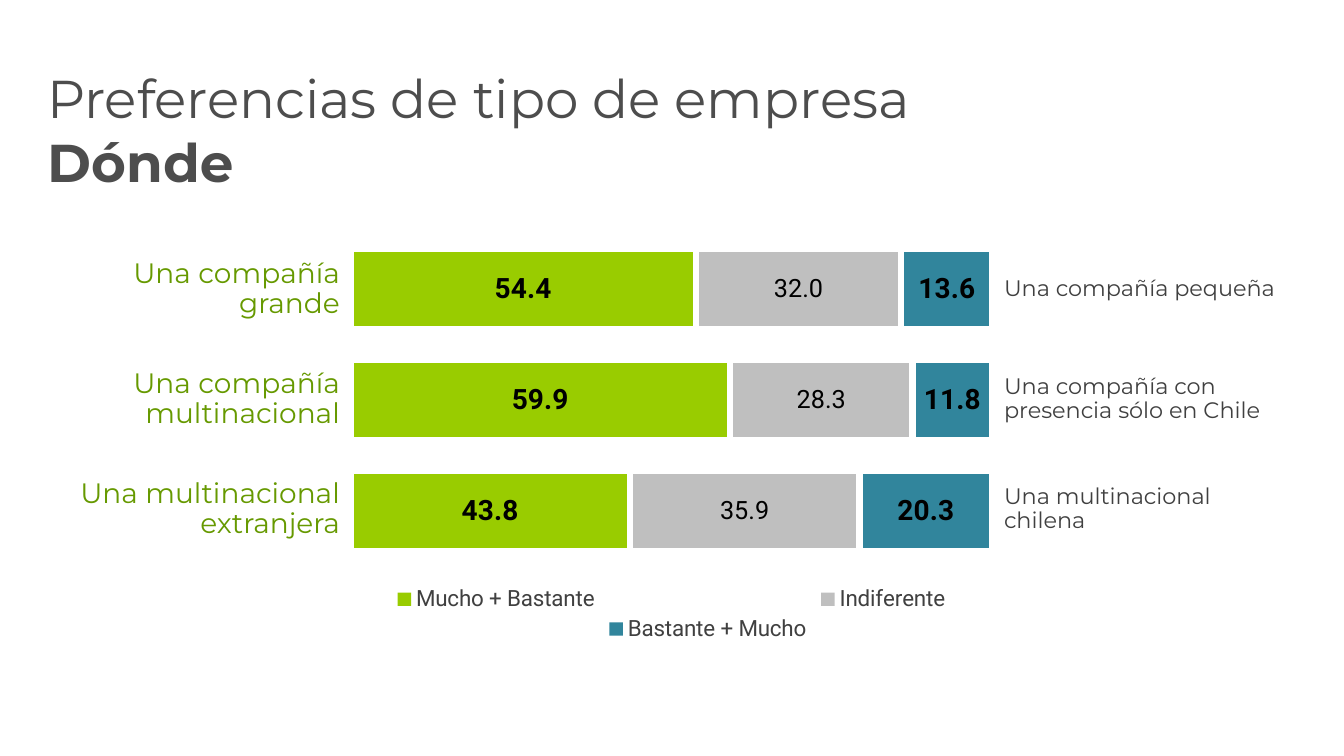
from dataclasses import dataclass
from typing import Any

from lxml.etree import SubElement
from pptx import Presentation
from pptx.chart.data import CategoryChartData
from pptx.dml.color import RGBColor
from pptx.enum.chart import XL_CHART_TYPE, XL_LABEL_POSITION, XL_LEGEND_POSITION
from pptx.enum.text import MSO_ANCHOR, MSO_AUTO_SIZE, PP_ALIGN
from pptx.oxml import parse_xml
from pptx.oxml.ns import nsdecls, qn
from pptx.util import Inches, Pt

COLORS = {
    "lime": "99CC00", "gray": "BFBFBF", "teal": "31859C", "white": "FFFFFF",
    "black": "000000", "green": "669900", "text": "404040", "title": "4D4D4D",
}
TEXT = "Montserrat"
CHART = "Roboto"
TOP, STEP = 2.87, 1.09  # middle of the first row, distance between rows
PLOT = {"x": 0.106, "y": 0.036, "w": 0.788, "h": 0.778}


@dataclass
class Row:
    left: str
    right: str
    lines: int  # lines taken by the right label


@dataclass
class Series:
    name: str
    color: str
    values: tuple[float, ...]
    label: dict[str, Any] | None = None


ROWS = [
    Row("Una compañía grande", "Una compañía pequeña", 1),
    Row("Una compañía multinacional", "Una compañía con presencia sólo en Chile", 2),
    Row("Una multinacional extranjera", "Una multinacional chilena", 2),
]

STRONG = {"size": Pt(20), "bold": True}
PLAIN = {"size": Pt(18), "bold": False}
SPACER = Series(" ", "white", (1, 1, 1))
SERIES = [
    Series("Mucho + Bastante", "lime", (54.4, 59.9, 43.8), STRONG),
    SPACER,
    Series("Indiferente", "gray", (32.0, 28.3, 35.9), PLAIN),
    SPACER,
    Series("Bastante + Mucho", "teal", (13.6, 11.8, 20.3), STRONG),
]


def rgb(name: str) -> RGBColor:
    return RGBColor.from_string(COLORS[name])


def apply(target: Any, values: dict[str, Any]) -> None:
    for key, value in values.items():
        setattr(target, key, value)


def style(font: Any, color: str, values: dict[str, Any]) -> None:
    apply(font, values)
    font.color.rgb = rgb(color)


def add_box(slide: Any, left: float, top: float, width: float, height: float,
            values: dict[str, Any]) -> Any:
    box = slide.shapes.add_textbox(
        Inches(left), Inches(top), Inches(width), Inches(height))
    apply(box.text_frame, {"word_wrap": True, **values})
    return box.text_frame.paragraphs[0]


def add_run(para: Any, text: str, color: str, size: int, bold: bool = False) -> Any:
    run = para.add_run()
    run.text = text
    style(run.font, color, {"name": TEXT, "size": Pt(size), "bold": bold})
    return run


def add_label(slide: Any, text: str, left: float, mid: float, width: float,
              height: float, align: Any, color: str, size: int) -> Any:
    para = add_box(slide, left, mid - height / 2, width, height, {
        "vertical_anchor": MSO_ANCHOR.MIDDLE,
        "auto_size": MSO_AUTO_SIZE.SHAPE_TO_FIT_TEXT,
    })
    apply(para, {"alignment": align, "line_spacing": 0.9})
    return add_run(para, text, color, size)


def outline(run: Any, color: str) -> None:
    line = parse_xml(
        f'<a:ln {nsdecls("a")} w="{Pt(0.75)}"><a:solidFill>'
        f'<a:srgbClr val="{COLORS[color]}"/></a:solidFill></a:ln>')
    run.font._element.insert(0, line)


def set_plot(chart: Any) -> None:
    area = chart._chartSpace.find(".//" + qn("c:plotArea"))
    for old in area.findall(qn("c:layout")):
        area.remove(old)
    layout = parse_xml(f'<c:layout {nsdecls("c")}><c:manualLayout/></c:layout>')
    parts = {"layoutTarget": "inner", "xMode": "edge", "yMode": "edge", **PLOT}
    for tag, value in parts.items():
        SubElement(layout[0], qn("c:" + tag)).set("val", str(value))
    area.insert(0, layout)


def add_bars(slide: Any) -> None:
    data = CategoryChartData(number_format="0.0")
    data.categories = [str(i + 1) for i in range(len(ROWS))]
    for item in SERIES:
        data.add_series(item.name, item.values)
    chart = slide.shapes.add_chart(
        XL_CHART_TYPE.BAR_STACKED_100, Inches(2.66), Inches(2.16),
        Inches(8), Inches(4.25), data).chart
    apply(chart, {"has_title": False, "has_legend": True})
    style(chart.font, "black", {"name": CHART, "size": Pt(18)})
    set_plot(chart)

    # Axes and legend
    apply(chart.category_axis, {"visible": False, "reverse_order": True})
    apply(chart.value_axis, {"visible": False, "has_major_gridlines": False})
    apply(chart.legend, {
        "position": XL_LEGEND_POSITION.BOTTOM, "include_in_layout": False})
    style(chart.legend.font, "text", {"name": CHART, "size": Pt(16)})

    # Bars and their values
    plot = chart.plots[0]
    apply(plot, {"gap_width": 50, "overlap": 100, "vary_by_categories": False})
    for item, bar in zip(SERIES, plot.series):
        bar.format.fill.solid()
        bar.format.fill.fore_color.rgb = rgb(item.color)
        if item.label:
            labels = bar.data_labels
            apply(labels, {
                "show_value": True, "position": XL_LABEL_POSITION.CENTER,
                "number_format": "0.0", "number_format_is_linked": False,
            })
            style(labels.font, "black", {"name": CHART, **item.label})


def main() -> None:
    deck = Presentation()
    apply(deck, {"slide_width": Inches(13.33), "slide_height": Inches(7.5)})
    slide = deck.slides.add_slide(deck.slide_layouts[6])

    add_bars(slide)

    # Labels on both sides of the bars
    for i, row in enumerate(ROWS):
        mid = TOP + i * STEP
        run = add_label(slide, row.left, 0.37, mid, 3.1, 0.71,
                        PP_ALIGN.RIGHT, "green", 20)
        outline(run, "green")
        add_label(slide, row.right, 9.86, mid, 3.08, 0.09 + 0.25 * row.lines,
                  PP_ALIGN.LEFT, "text", 16)

    # Title
    para = add_box(slide, 0.37, 0.6, 9.52, 1.09,
                   {"vertical_anchor": MSO_ANCHOR.TOP})
    add_run(para, "Preferencias de tipo de empresa", "title", 38)
    para.add_line_break()
    add_run(para, "Dónde", "title", 38, True)

    deck.save("out.pptx")


if __name__ == "__main__":
    main()
